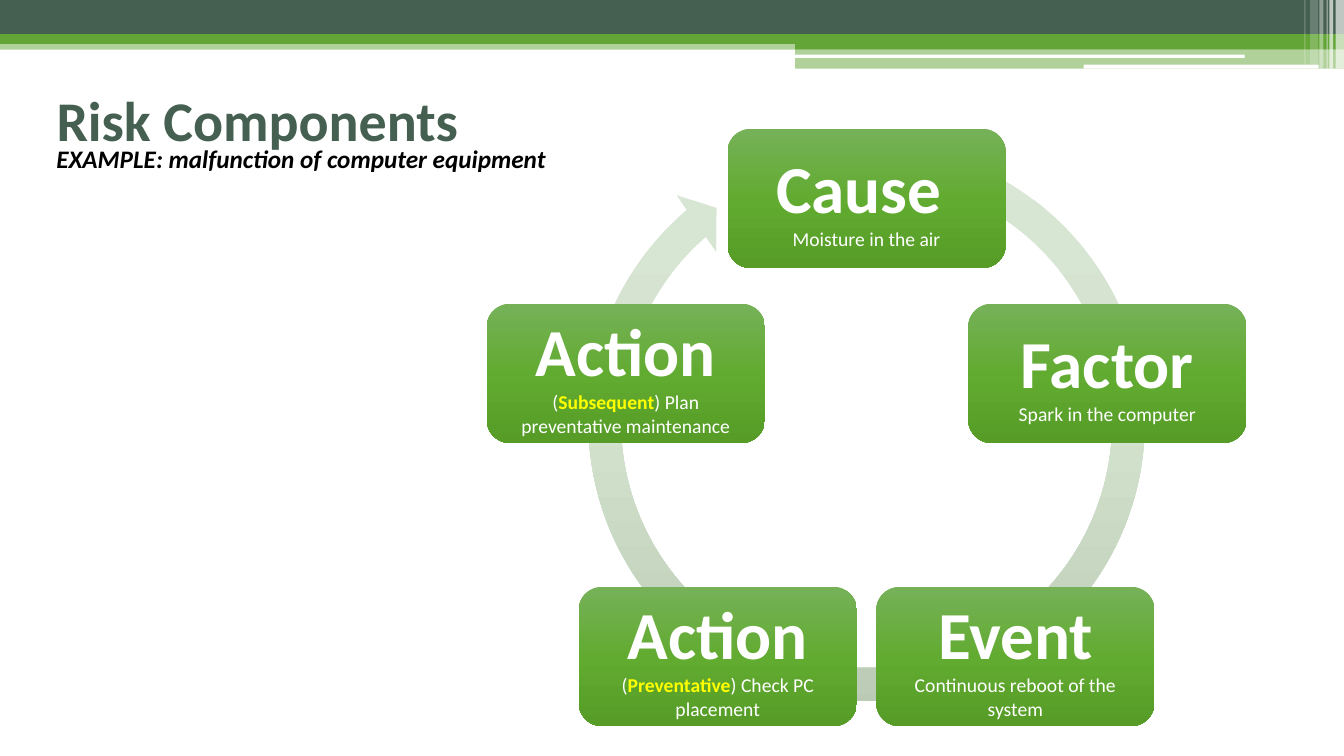
from math import cos, radians, sin

from pptx import Presentation
from pptx.dml.color import RGBColor
from pptx.enum.shapes import MSO_SHAPE
from pptx.enum.text import MSO_ANCHOR, PP_ALIGN
from pptx.oxml import parse_xml
from pptx.oxml.ns import nsdecls, qn
from pptx.util import Cm, Pt

RECT = MSO_SHAPE.RECTANGLE
ROUND = MSO_SHAPE.ROUNDED_RECTANGLE
CIRCULAR_ARROW = MSO_SHAPE.CIRCULAR_ARROW
MIDDLE = MSO_ANCHOR.MIDDLE
LEFT, CENTER = PP_ALIGN.LEFT, PP_ALIGN.CENTER

FONT = "Calibri"
DARK, GREEN, WHITE, YELLOW, BLACK = "455F51", "63A537", "FFFFFF", "FFFF00", "000000"
BOX_GRADIENT = ("76B158", "62AB31", "569C27")
ARROW_GRADIENT = ("DAE6D6", "D2E2CD", "BACAB5")

BANDS = [
    (RECT, 0, 1.02, 33.87, 0.23, GREEN, 50),
    (RECT, 0, 0, 33.87, 0.86, DARK, 100),
    (RECT, 0, 0.86, 33.87, 0.25, GREEN, 100),
    (RECT, 20.04, 0.99, 13.83, 0.25, GREEN, 100),
    (RECT, 20.04, 1.23, 13.83, 0.5, GREEN, 50),
    (ROUND, 20.02, 1.38, 11.35, 0.08, WHITE, 100),
    (ROUND, 27.31, 1.63, 5.92, 0.1, WHITE, 100),
    (RECT, 33.66, 0, 0.21, 1.73, WHITE, 65),
    (RECT, 33.5, 0, 0.1, 1.73, WHITE, 65),
    (RECT, 33.43, 0, 0.03, 1.73, WHITE, 60),
    (RECT, 33.25, 0, 0.1, 1.73, WHITE, 40),
    (RECT, 33.02, 0, 0.2, 1.63, WHITE, 20),
    (RECT, 32.87, 0, 0.03, 1.63, WHITE, 30),
]

STEPS = [
    ("Cause ", [("Moisture in the air", False)]),
    ("Factor", [("Spark in the computer", False)]),
    ("Event", [("Continuous reboot of the system", False)]),
    ("Action", [("(", False), ("Preventative", True), (") Check PC placement", False)]),
    ("Action", [("(", False), ("Subsequent", True),
                (") Plan preventative maintenance", False)]),
]

CYCLE_X, CYCLE_Y, CYCLE_RADIUS = 21.84, 11.38, 6.38
BOX_W, BOX_H = 7.01, 3.51
ARROW_SIZE, ARROW_TOP = 14.93, 3.18


def color(value):
    return RGBColor.from_string(value)


def add_run(p, text, size, value, bold=False, italic=False):
    r = p.add_run()
    r.text = text
    f = r.font
    f.name, f.size, f.bold, f.italic = FONT, Pt(size), bold, italic
    f.color.rgb = color(value)


def add_plain_shape(s, kind, x, y, w, h):
    sp = s.shapes.add_shape(kind, Cm(x), Cm(y), Cm(w), Cm(h))
    sp.shadow.inherit = False
    sp.line.fill.background()
    return sp


def add_band(s, kind, x, y, w, h, value, opacity):
    sp = add_plain_shape(s, kind, x, y, w, h)
    sp.fill.solid()
    sp.fill.fore_color.rgb = color(value)
    if opacity < 100:
        srgb = sp._element.spPr.find(".//" + qn("a:srgbClr"))
        srgb.append(parse_xml(f'<a:alpha {nsdecls("a")} val="{opacity * 1000}"/>'))


def fill_gradient(sp, values):
    stops = "".join(
        f'<a:gs pos="{i * 50000}"><a:srgbClr val="{value}"/></a:gs>'
        for i, value in enumerate(values))
    gradient = parse_xml(
        f'<a:gradFill {nsdecls("a")} rotWithShape="1"><a:gsLst>{stops}</a:gsLst>'
        '<a:lin ang="5400000" scaled="0"/></a:gradFill>')
    sp._element.spPr.find(qn("a:prstGeom")).addnext(gradient)


def add_cycle_arrow(s):
    sp = add_plain_shape(s, CIRCULAR_ARROW, CYCLE_X - ARROW_SIZE / 2, ARROW_TOP,
                         ARROW_SIZE, ARROW_SIZE)
    for i, value in enumerate((0.055, 3.307, 137.676, 173.91, 0.058)):
        sp.adjustments[i] = value
    fill_gradient(sp, ARROW_GRADIENT)


def add_step(s, index, heading, details):
    angle = radians(index * 360 / len(STEPS))
    x = CYCLE_X + CYCLE_RADIUS * sin(angle) - BOX_W / 2
    y = CYCLE_Y - CYCLE_RADIUS * cos(angle) - BOX_H / 2
    sp = add_plain_shape(s, ROUND, x, y, BOX_W, BOX_H)
    fill_gradient(sp, BOX_GRADIENT)
    tf = sp.text_frame
    tf.word_wrap = True
    tf.vertical_anchor = MIDDLE
    tf.margin_left = tf.margin_right = tf.margin_top = tf.margin_bottom = Cm(0.51)
    p = tf.paragraphs[0]
    p.alignment = CENTER
    add_run(p, heading, 48, WHITE, bold=True)
    p = tf.add_paragraph()
    p.alignment = CENTER
    for text, marked in details:
        add_run(p, text, 14, YELLOW if marked else WHITE, bold=marked)


def set_title(s, text):
    title = s.shapes.title
    title.left, title.top, title.width, title.height = Cm(1.17), Cm(1.52), Cm(30.48), Cm(2.97)
    tf = title.text_frame
    tf.vertical_anchor = MIDDLE
    p = tf.paragraphs[0]
    p.alignment = LEFT
    add_run(p, text, 40, DARK, bold=True)


def add_example(s, text):
    box = s.shapes.add_textbox(Cm(1.17), Cm(3.48), Cm(13), Cm(1.02))
    tf = box.text_frame
    tf.word_wrap = False
    add_run(tf.paragraphs[0], text, 18, BLACK, bold=True, italic=True)


def main():
    prs = Presentation()
    prs.slide_width, prs.slide_height = Cm(33.87), Cm(19.05)
    s = prs.slides.add_slide(prs.slide_layouts[5])
    for band in BANDS:
        add_band(s, *band)
    set_title(s, "Risk Components")
    add_cycle_arrow(s)
    for index, (heading, details) in enumerate(STEPS):
        add_step(s, index, heading, details)
    add_example(s, "EXAMPLE: malfunction of computer equipment")
    prs.save("out.pptx")


if __name__ == "__main__":
    main()
